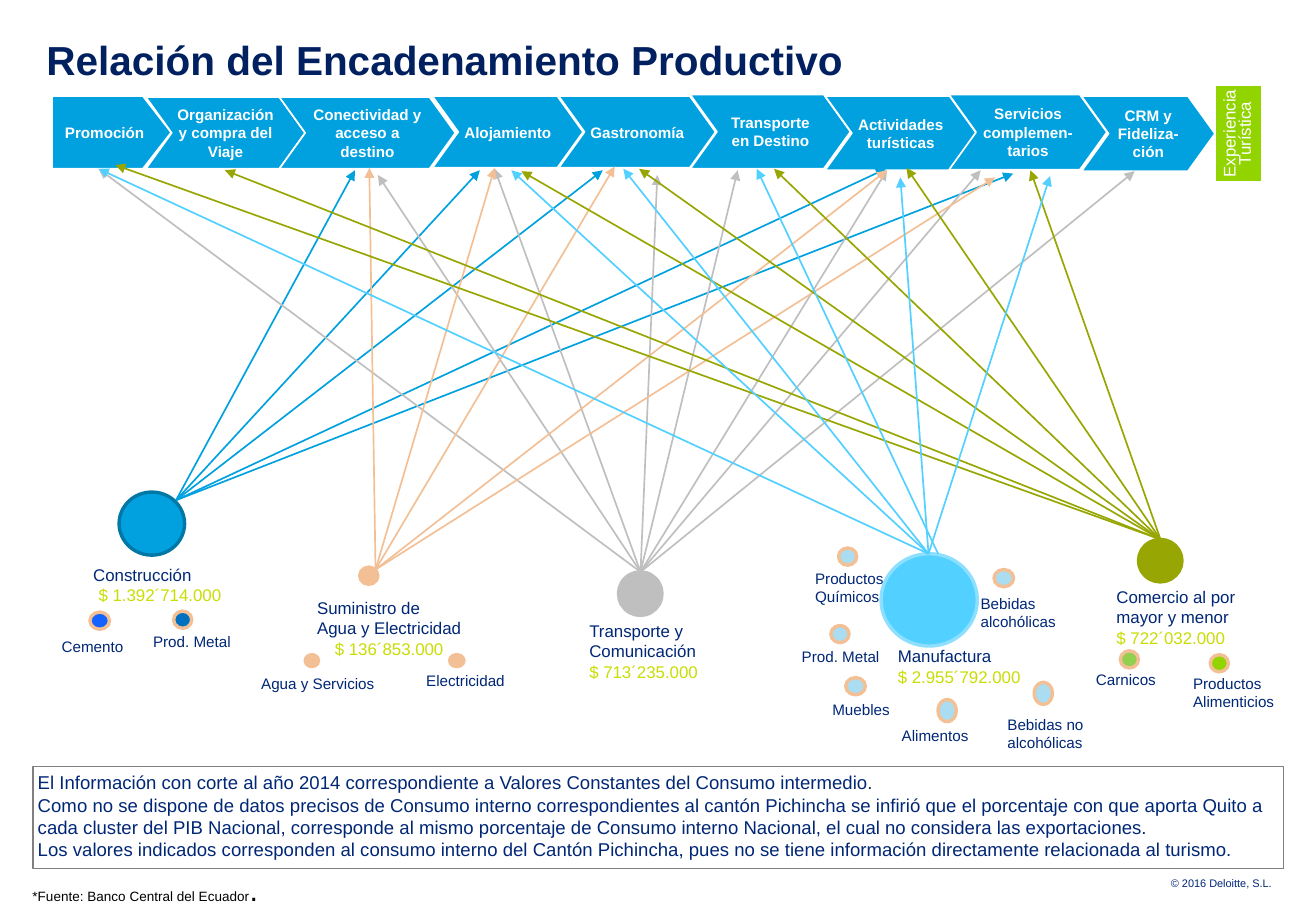
from collections import namedtuple

import pptx
import pptx.dml.color
import pptx.enum.shapes
import pptx.enum.text
import pptx.oxml
import pptx.oxml.ns
import pptx.util

Cm = pptx.util.Cm
Pt = pptx.util.Pt
SHAPE = pptx.enum.shapes.MSO_SHAPE
ALIGN = pptx.enum.text.PP_ALIGN
ANCHOR = pptx.enum.text.MSO_ANCHOR

Box = namedtuple("Box", "left top width height")
Cluster = namedtuple("Cluster", "box circle fill line label lines amount align products")
Product = namedtuple("Product", "dot fill label lines")


class Theme:
    font = "Arial"
    blue, blue_edge = "00A1DE", "0077A4"
    sky, sky_edge = "52D0FF", "8CDFFF"
    peach, grey, olive = "F3C095", "BFBFBF", "97A602"
    lime, amount = "92D400", "C9DD03"
    cement, metal, pale, meat = "1462FF", "0070C0", "AADDF1", "92D050"
    navy, title = "002776", "002060"
    white, black, border = "FFFFFF", "000000", "808080"
    title_size, note_size, body_size, small_size = 24, 11, 10, 9
    source_size, copyright_size, period_size = 8, 6.5, 18


STEPS = [
    ("Promoción", Box(0, 0.23, 2.49, 1.52)),
    ("Organización y compra del Viaje", Box(1.96, 0.25, 3.33, 1.5)),
    ("Conectividad y acceso a destino", Box(4.75, 0.25, 3.68, 1.5)),
    ("Alojamiento", Box(7.95, 0.23, 3.15, 1.5)),
    ("Gastronomía", Box(10.59, 0.23, 3.28, 1.5)),
    ("Transporte en Destino", Box(13.34, 0.2, 3.35, 1.55)),
    ("Actividades turísticas", Box(16.16, 0.23, 3.16, 1.55)),
    ("Servicios complemen-tarios", Box(18.75, 0.2, 3.3, 1.57)),
    ("CRM y Fideliza-ción", Box(21.52, 0.23, 2.79, 1.57)),
]

CLUSTERS = [
    Cluster(Box(1, 10, 4, 4), Box(1.49, 0.29, 1.37, 1.32), Theme.blue, Theme.blue_edge,
            Box(0.85, 1.71, 2.87, 1.04), ["Construcción"], "$ 1.392´714.000", ALIGN.RIGHT, [
        Product(Box(0.88, 2.8, 0.41, 0.36), Theme.cement, Box(0.19, 3.23, 1.5, 0.58), ["Cemento"]),
        Product(Box(2.63, 2.78, 0.38, 0.36), Theme.metal, Box(2.1, 3.13, 1.83, 0.58), ["Prod. Metal"])]),
    Cluster(Box(5, 11, 6, 4), Box(2.52, 0.86, 0.38, 0.36), Theme.peach, Theme.peach,
            Box(1.53, 1.4, 3.23, 1.5), ["Suministro de", "Agua y Electricidad"], "$ 136´853.000", ALIGN.CENTER, [
        Product(Box(1.38, 2.69, 0.28, 0.25), Theme.peach, Box(0.36, 3, 2.59, 0.58), ["Agua y Servicios"]),
        Product(Box(4.4, 2.69, 0.3, 0.25), Theme.peach, Box(3.81, 2.94, 1.85, 0.58), ["Electricidad"])]),
    Cluster(Box(12, 11, 3, 4), Box(0.93, 0.96, 0.91, 0.91), Theme.grey, Theme.grey,
            Box(0.22, 1.88, 2.49, 1.5), ["Transporte y", "Comunicación"], "$ 713´235.000", ALIGN.LEFT, []),
    Cluster(Box(16, 11, 7, 5), Box(2.42, 0.58, 2.01, 1.93), Theme.sky, Theme.sky_edge,
            Box(2.67, 2.41, 2.77, 1.04), ["Manufactura"], "$ 2.955´792.000", ALIGN.LEFT, [
        Product(Box(1.53, 0.46, 0.38, 0.36), Theme.pale, Box(0.94, 0.81, 1.73, 0.97), ["Productos", "Químicos"]),
        Product(Box(1.37, 2.08, 0.38, 0.36), Theme.pale, Box(0.66, 2.44, 1.83, 0.58), ["Prod. Metal"]),
        Product(Box(1.68, 3.17, 0.41, 0.36), Theme.pale, Box(1.3, 3.55, 1.42, 0.58), ["Muebles"]),
        Product(Box(3.61, 3.63, 0.38, 0.46), Theme.pale, Box(2.75, 4.09, 1.6, 0.58), ["Alimentos"]),
        Product(Box(5.62, 3.27, 0.38, 0.46), Theme.pale, Box(4.96, 3.86, 1.88, 0.97), ["Bebidas no", "alcohólicas"]),
        Product(Box(4.78, 0.91, 0.41, 0.36), Theme.pale, Box(4.4, 1.32, 1.78, 0.97), ["Bebidas", "alcohólicas"])]),
    Cluster(Box(22, 11, 5, 4), Box(1.8, 0.28, 0.91, 0.89), Theme.olive, Theme.olive,
            Box(1.24, 1.17, 2.82, 1.5), ["Comercio al por", "mayor y menor"], "$ 722´032.000", ALIGN.LEFT, [
        Product(Box(1.42, 2.61, 0.38, 0.36), Theme.meat, Box(0.81, 2.92, 1.47, 0.58), ["Carnicos"]),
        Product(Box(3.3, 2.69, 0.38, 0.36), Theme.lime, Box(2.84, 3, 1.91, 0.97), ["Productos", "Alimenticios"])]),
]

FLOWS = [
    (Theme.blue, (1.68, 7.46), [(5.42, 0.56), (8.03, 0.56), (10.6, 0.56), (16.52, 0.53), (19.18, 0.63)]),
    (Theme.grey, (11.39, 8.96), [(13.42, 0.56), (11.74, 0.66), (16.54, 0.56), (0.06, 0.53),
                                 (8.34, 0.53), (5.9, 0.66), (18.5, 0.56), (21.72, 0.58)]),
    (Theme.peach, (5.85, 8.91), [(16.54, 0.56), (8.34, 0.51), (5.72, 0.51), (10.85, 0.48), (18.8, 0.71)]),
    (Theme.olive, (22.26, 8.28), [(2.7, 0.56), (11.36, 0.53), (16.95, 0.51), (19.54, 0.56),
                                  (14.18, 0.53), (0.41, 0.45), (8.9, 0.58)]),
    (Theme.sky, (17.41, 8.58), [(8.69, 0.56), (16.82, 0.71), (11.03, 0.53), (0.06, 0.53), (19.95, 0.68)]),
    (Theme.sky, (17.61, 8.58), [(13.82, 0.53)]),
]

NOTES = [
    "El Información con corte al año 2014 correspondiente a Valores Constantes del Consumo intermedio.",
    "Como no se dispone de datos precisos de Consumo interno correspondientes al cantón Pichincha se infirió "
    "que el porcentaje con que aporta Quito a cada cluster del PIB Nacional, corresponde al mismo porcentaje "
    "de Consumo interno Nacional, el cual no considera las exportaciones.",
    "Los valores indicados corresponden al consumo interno del Cantón Pichincha, pues no se tiene información "
    "directamente relacionada al turismo.",
]


def rgb(color):
    return pptx.dml.color.RGBColor.from_string(color)


def inside(outer, inner):
    return Box(outer.left + inner.left, outer.top + inner.top, inner.width, inner.height)


def write(shape, lines, size, color, bold=False, align=ALIGN.LEFT, anchor=ANCHOR.TOP, wrap=True, inset=0.1):
    frame = shape.text_frame
    frame.word_wrap = wrap
    frame.vertical_anchor = anchor
    frame.margin_left = frame.margin_top = frame.margin_right = frame.margin_bottom = Cm(inset)
    frame.text = "\n".join(lines)
    for paragraph in frame.paragraphs:
        paragraph.alignment = align
        paragraph.font.name = Theme.font
        paragraph.font.size = Pt(size)
        paragraph.font.bold = bold
        paragraph.font.color.rgb = rgb(color)
    return frame


def add_text(slide, box, lines, size, color, **options):
    return write(slide.shapes.add_textbox(*map(Cm, box)), lines, size, color, **options)


def add_shape(slide, kind, box, fill, line, line_width):
    shape = slide.shapes.add_shape(kind, *map(Cm, box))
    shape.shadow.inherit = False
    if fill:
        shape.fill.solid()
        shape.fill.fore_color.rgb = rgb(fill)
    else:
        shape.fill.background()
    shape.line.color.rgb = rgb(line)
    shape.line.width = Pt(line_width)
    return shape


def add_value_chain(slide, box):
    for index, (label, step) in enumerate(STEPS):
        kind = SHAPE.CHEVRON if index else SHAPE.PENTAGON
        shape = add_shape(slide, kind, inside(box, step), Theme.blue, Theme.white, 1)
        shape.adjustments[0] = 0.36 if index else 0.39
        write(shape, [label], Theme.small_size, Theme.white, bold=True, align=ALIGN.CENTER, anchor=ANCHOR.MIDDLE)
    experience = Box(box.left + box.width - 0.99, box.top, 0.99, box.height)
    shape = add_shape(slide, SHAPE.RECTANGLE, experience, Theme.lime, Theme.white, 1)
    frame = write(shape, ["Experiencia Turística"], Theme.body_size, Theme.white,
                  align=ALIGN.CENTER, anchor=ANCHOR.MIDDLE, inset=0.04)
    frame.paragraphs[0].line_spacing = 0.75
    shape.element.txBody.find(pptx.oxml.ns.qn("a:bodyPr")).set("vert", "vert270")


def add_cluster(slide, box, cluster):
    add_shape(slide, SHAPE.OVAL, inside(box, cluster.circle), cluster.fill, cluster.line, 2)
    frame = add_text(slide, inside(box, cluster.label), cluster.lines + [cluster.amount],
                     Theme.body_size, Theme.navy, wrap=cluster.align == ALIGN.RIGHT)
    amount = frame.paragraphs[-1]
    amount.alignment = cluster.align
    amount.font.color.rgb = rgb(Theme.amount)
    for product in cluster.products:
        add_shape(slide, SHAPE.OVAL, inside(box, product.dot), product.fill, Theme.peach, 2)
        add_text(slide, inside(box, product.label), product.lines, Theme.small_size, Theme.navy, wrap=False)


def add_flows(slide, box):
    for color, (start_x, start_y), targets in FLOWS:
        for end_x, end_y in targets:
            arrow = slide.shapes.add_connector(
                pptx.enum.shapes.MSO_CONNECTOR.STRAIGHT,
                Cm(box.left + start_x), Cm(box.top + start_y), Cm(box.left + end_x), Cm(box.top + end_y))
            arrow.line.color.rgb = rgb(color)
            arrow.line.width = Pt(1)
            head = pptx.oxml.parse_xml(f'<a:tailEnd {pptx.oxml.ns.nsdecls("a")} type="triangle"/>')
            arrow.line._get_or_add_ln().append(head)
            effects = pptx.oxml.parse_xml(f'<a:effectLst {pptx.oxml.ns.nsdecls("a")}/>')
            arrow.element.spPr.append(effects)


def add_footer(slide, box):
    note = add_shape(slide, SHAPE.RECTANGLE, Box(box.left, box.top, box.width, 2.13), None, Theme.border, 0.75)
    write(note, NOTES, Theme.note_size, Theme.navy)
    source = add_text(slide, Box(box.left - 0.26, box.top + 2.05, 5.51, 1.02),
                      ["*Fuente: Banco Central del Ecuador"], Theme.source_size, Theme.black,
                      wrap=False, inset=0.25)
    source.margin_top = source.margin_bottom = Cm(0.13)
    period = source.paragraphs[0].add_run()
    period.text = "."
    period.font.size = Pt(Theme.period_size)
    add_text(slide, Box(box.left + box.width - 5.19, box.top + 2.28, 4.95, 0.3), ["© 2016 Deloitte, S.L."],
             Theme.copyright_size, Theme.navy, align=ALIGN.RIGHT, anchor=ANCHOR.BOTTOM, wrap=False, inset=0)


def main():
    presentation = pptx.Presentation()
    presentation.slide_width, presentation.slide_height = Cm(27.51), Cm(19.05)
    slide = presentation.slides.add_slide(presentation.slide_layouts[6])
    add_text(slide, Box(0.97, 0.74, 25.6, 1.75), ["Relación del Encadenamiento Productivo"],
             Theme.title_size, Theme.title, bold=True, inset=0)
    add_value_chain(slide, Box(1.09, 1.78, 25.3, 2.03))
    for cluster in CLUSTERS:
        add_cluster(slide, cluster.box, cluster)
    add_flows(slide, Box(2, 3, 23, 9))
    add_footer(slide, Box(0.69, 16.03, 26.14, 3))
    presentation.save("out.pptx")


if __name__ == "__main__":
    main()
